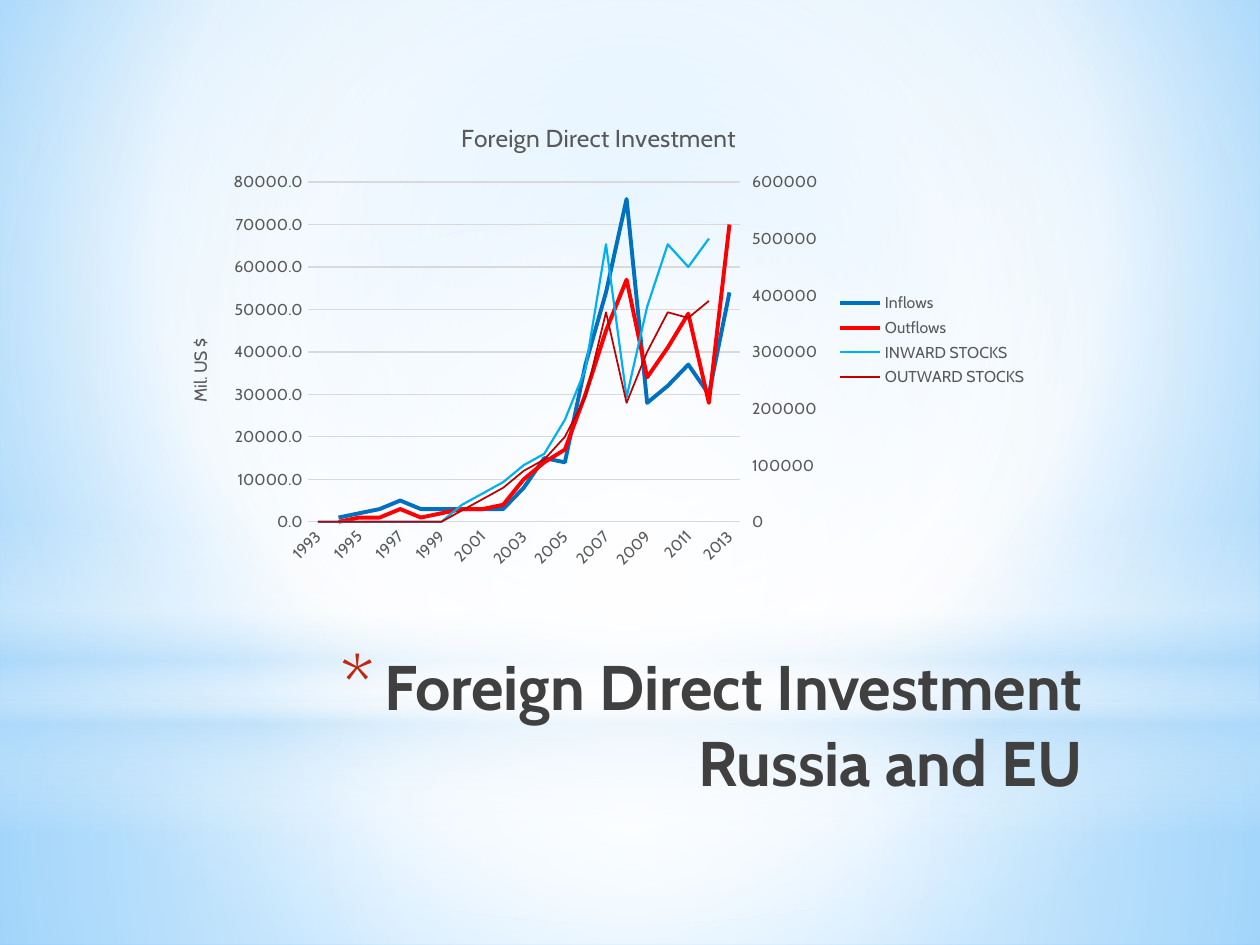
from copy import deepcopy
from typing import NamedTuple, Optional

from lxml.etree import SubElement
from pptx import Presentation
from pptx.chart.data import CategoryChartData
from pptx.dml.color import RGBColor
from pptx.enum.chart import XL_CHART_TYPE, XL_LEGEND_POSITION, XL_TICK_MARK
from pptx.enum.shapes import MSO_SHAPE
from pptx.enum.text import MSO_ANCHOR, MSO_AUTO_SIZE, PP_ALIGN
from pptx.oxml.ns import qn
from pptx.util import Cm, Pt

FONT = "Cabin"
COLORS = {
    "white": "FFFFFF", "pale": "B4DCFA", "sky": "9ED5FF", "blue": "5BB9FF",
    "title": "404040", "bullet": "C3260C", "label": "595959", "grid": "D9D9D9",
    "inflow": "0070C0", "outflow": "FF0000",
    "inward": "00B0F0", "outward": "C00000",
}


class Stop(NamedTuple):
    pos: int
    color: str
    alpha: int = 100


class Wash(NamedTuple):
    shape: MSO_SHAPE
    top: float
    height: float
    stops: list[Stop]
    center: Optional[tuple] = (50, 50, 50, 50)  # None: top-to-bottom gradient


class Flow(NamedTuple):
    name: str
    color: str
    width: float
    thousands: list


WASHES = [
    Wash(MSO_SHAPE.RECTANGLE, 14.17, 4.88,
         [Stop(0, "white", 91), Stop(37, "white", 76), Stop(100, "pale", 79)]),
    Wash(MSO_SHAPE.RECTANGLE, 0, 14.17,
         [Stop(0, "white", 89), Stop(48, "white", 62), Stop(100, "pale", 79)]),
    Wash(MSO_SHAPE.RECTANGLE, 10.46, 6.35,
         [Stop(0, "white", 0), Stop(29, "white", 30), Stop(45, "pale", 40),
          Stop(55, "white", 26), Stop(65, "pale", 60), Stop(100, "white", 0)], None),
    Wash(MSO_SHAPE.OVAL, 4.45, 14.17, [Stop(0, "white"), Stop(56, "white", 0)]),
]
FLOWS = [
    Flow("Inflows", "inflow", 2.25,
         [None, 1, 2, 3, 5, 3, 3, 3, 3, 3, 8, 15, 14, 37, 54, 76, 28, 32, 37, 30, 54]),
    Flow("Outflows", "outflow", 2.25,
         [None, 0, 1, 1, 3, 1, 2, 3, 3, 4, 10, 14, 17, 30, 45, 57, 34, 41, 49, 28, 70]),
]
STOCKS = [
    Flow("INWARD STOCKS", "inward", 1.25,
         [0] * 7 + [30, 50, 70, 100, 120, 180, 270, 490, 220, 380, 490, 450, 500, None]),
    Flow("OUTWARD STOCKS", "outward", 1,
         [0] * 7 + [20, 40, 60, 90, 110, 150, 220, 370, 210, 300, 370, 360, 390, None]),
]


def rgb(name: str) -> RGBColor:
    return RGBColor.from_string(COLORS[name])


def set_attrs(obj, values: dict) -> None:
    for name, value in values.items():
        setattr(obj, name, value)


def set_font(font, size: float, color: str, bold: bool = False) -> None:
    set_attrs(font, {"name": FONT, "size": Pt(size), "bold": bold})
    font.color.rgb = rgb(color)


def add_xml(parent, tag: str, **attrs):
    return SubElement(parent, qn(tag), {k: str(v) for k, v in attrs.items()})


def set_gradient(props, stops: list[Stop], center: Optional[tuple]) -> None:
    """Turn the solid fill in a property element into a gradient."""
    solid = props.find(qn("a:solidFill"))
    grad = add_xml(props, "a:gradFill", rotWithShape=1)
    props.replace(solid, grad)
    gs_list = add_xml(grad, "a:gsLst")
    for stop in stops:
        gs = add_xml(gs_list, "a:gs", pos=stop.pos * 1000)
        clr = add_xml(gs, "a:srgbClr", val=COLORS[stop.color])
        add_xml(clr, "a:alpha", val=stop.alpha * 1000)
    if center is None:
        add_xml(grad, "a:lin", ang=5400000, scaled=0)
    else:
        focus = add_xml(grad, "a:path", path="circle")
        add_xml(focus, "a:fillToRect", **{k: v * 1000 for k, v in zip("ltrb", center)})


def add_wash(s, wash: Wash) -> None:
    sp = s.shapes.add_shape(wash.shape, 0, Cm(wash.top), Cm(25.4), Cm(wash.height))
    sp.shadow.inherit = False
    sp.line.fill.background()
    sp.fill.solid()
    set_gradient(sp._element.spPr, wash.stops, wash.center)


def format_title(title) -> None:
    set_attrs(title, {"left": Cm(2.9), "top": Cm(12.93),
                      "width": Cm(19.18), "height": Cm(3.18)})
    tf = title.text_frame
    tf.text = "Foreign Direct Investment Russia and EU"
    set_attrs(tf, {"word_wrap": True, "auto_size": MSO_AUTO_SIZE.NONE,
                   "vertical_anchor": MSO_ANCHOR.TOP})
    p = tf.paragraphs[0]
    p.alignment = PP_ALIGN.RIGHT
    set_font(p.runs[0].font, 36, "title", True)
    pPr = p._p.get_or_add_pPr()
    pPr.set("marL", str(Cm(0.89)))
    pPr.set("indent", str(-Cm(0.89)))
    add_xml(add_xml(pPr, "a:buClr"), "a:srgbClr", val=COLORS["bullet"])
    add_xml(pPr, "a:buSzPct", val=128000)
    add_xml(pPr, "a:buFont", typeface=FONT)
    add_xml(pPr, "a:buChar", char="*")


def set_caption(owner, text: str, size: float) -> None:
    tf = owner.text_frame
    tf.text = text
    set_font(tf.paragraphs[0].runs[0].font, size, "label")


def format_axes(chart) -> None:
    cat, val = chart.category_axis, chart.value_axis
    for axis in (cat, val):
        axis.major_tick_mark = axis.minor_tick_mark = XL_TICK_MARK.NONE
        set_font(axis.tick_labels.font, 9, "label")
    cat._element.find(qn("c:txPr")).find(qn("a:bodyPr")).set("rot", "-2700000")
    skip = add_xml(cat._element, "c:tickLblSkip", val=2)
    cat._element.find(qn("c:noMultiLvlLbl")).addprevious(skip)
    set_attrs(val, {"minimum_scale": 0, "maximum_scale": 80000, "major_unit": 10000})
    set_attrs(val.tick_labels, {"number_format": "0.0", "number_format_is_linked": False})
    val.format.line.fill.background()
    for line in (cat.format.line, val.major_gridlines.format.line):
        line.color.rgb = rgb("grid")
        line.width = Pt(0.75)
    set_caption(val.axis_title, "Mil. US $", 10)


def move_to_right_axis(chart, first: int) -> None:
    """Plot the series from index first on against a second value axis."""
    plot = chart._chartSpace.find(".//" + qn("c:lineChart"))
    right = deepcopy(plot)
    plot.addnext(right)
    for ser in plot.findall(qn("c:ser"))[first:]:
        plot.remove(ser)
    for ser in right.findall(qn("c:ser"))[:first]:
        right.remove(ser)
    cat, val = (deepcopy(a._element) for a in (chart.category_axis, chart.value_axis))
    chart.value_axis._element.addnext(val)
    val.addnext(cat)
    for tag in ("c:title", "c:majorGridlines"):
        val.remove(val.find(qn(tag)))
    ids = ("50010", "50020")
    for ref, axis_id in zip(right.findall(qn("c:axId")), ids):
        ref.set("val", axis_id)
    for axis, own, other in ((cat, *ids), (val, *ids[::-1])):
        axis.find(qn("c:axId")).set("val", own)
        axis.find(qn("c:crossAx")).set("val", other)
    cat.find(qn("c:delete")).set("val", "1")
    for tag, value in {"c:axPos": "r", "c:majorTickMark": "out", "c:crosses": "max",
                       "c:majorUnit": "100000"}.items():
        val.find(qn(tag)).set("val", value)
    val.find(qn("c:scaling")).find(qn("c:max")).set("val", "600000")
    val.find(qn("c:numFmt")).set("formatCode", "General")


def set_plot_area(chart, **box: float) -> None:
    area = chart._chartSpace.find(".//" + qn("c:plotArea"))
    for old in area.findall(qn("c:layout")):
        area.remove(old)
    layout = add_xml(area, "c:layout")
    area.insert(0, layout)
    manual = add_xml(layout, "c:manualLayout")
    for tag, value in {"layoutTarget": "inner", "xMode": "edge", "yMode": "edge", **box}.items():
        add_xml(manual, "c:" + tag, val=value)


def add_investment_chart(s) -> None:
    data = CategoryChartData()
    data.categories = [str(year) for year in range(1993, 2014)]
    lines = FLOWS + STOCKS
    for flow in lines:
        data.add_series(flow.name, [None if v is None else v * 1000 for v in flow.thousands])
    chart = s.shapes.add_chart(XL_CHART_TYPE.LINE, Cm(3.18), Cm(2.03),
                               Cm(17.78), Cm(9.65), data).chart
    set_font(chart.font, 10, "label")
    chart.has_title = chart.has_legend = True
    set_caption(chart.chart_title, "Foreign Direct Investment", 14)
    set_attrs(chart.legend, {"position": XL_LEGEND_POSITION.RIGHT, "include_in_layout": False})
    set_font(chart.legend.font, 9, "label")
    chart.plots[0].vary_by_categories = False
    for series, flow in zip(chart.plots[0].series, lines):
        series.smooth = False
        series.format.line.color.rgb = rgb(flow.color)
        series.format.line.width = Pt(flow.width)
    format_axes(chart)
    move_to_right_axis(chart, len(FLOWS))
    set_plot_area(chart, x=0.17, y=0.17, w=0.49, h=0.71)


def main() -> None:
    prs = Presentation()
    set_attrs(prs, {"slide_width": Cm(25.4), "slide_height": Cm(19.05)})
    s = prs.slides.add_slide(prs.slide_layouts[5])
    s.background.fill.solid()
    set_gradient(s._element.find(".//" + qn("p:bgPr")),
                 [Stop(0, "sky"), Stop(60, "white"), Stop(100, "blue")], (20, 10, 20, 60))
    for wash in WASHES:
        add_wash(s, wash)
    title = s.shapes.title
    format_title(title)
    s.shapes._spTree.append(title._element)  # bring in front of the washes
    add_investment_chart(s)
    prs.save("out.pptx")


if __name__ == "__main__":
    main()
